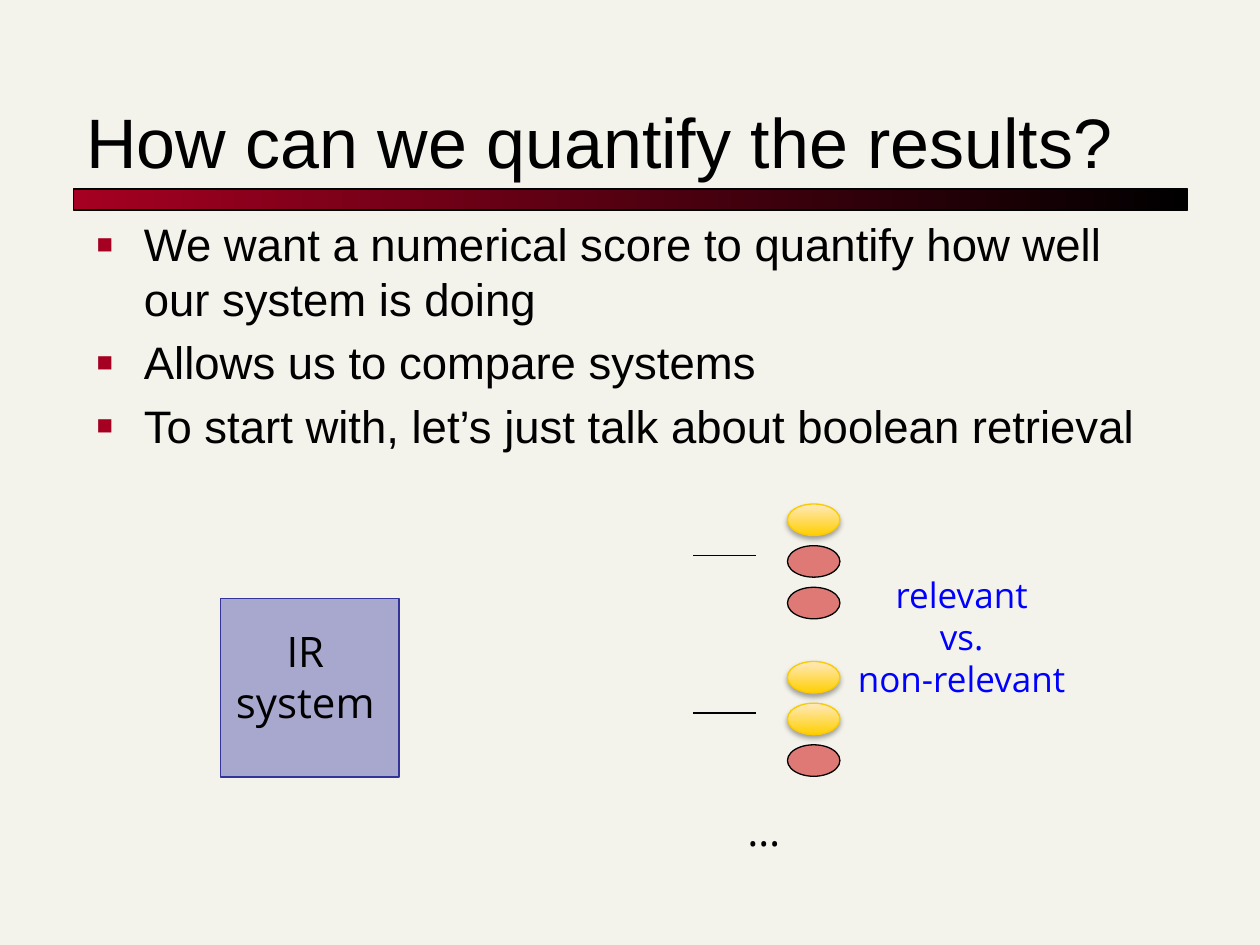
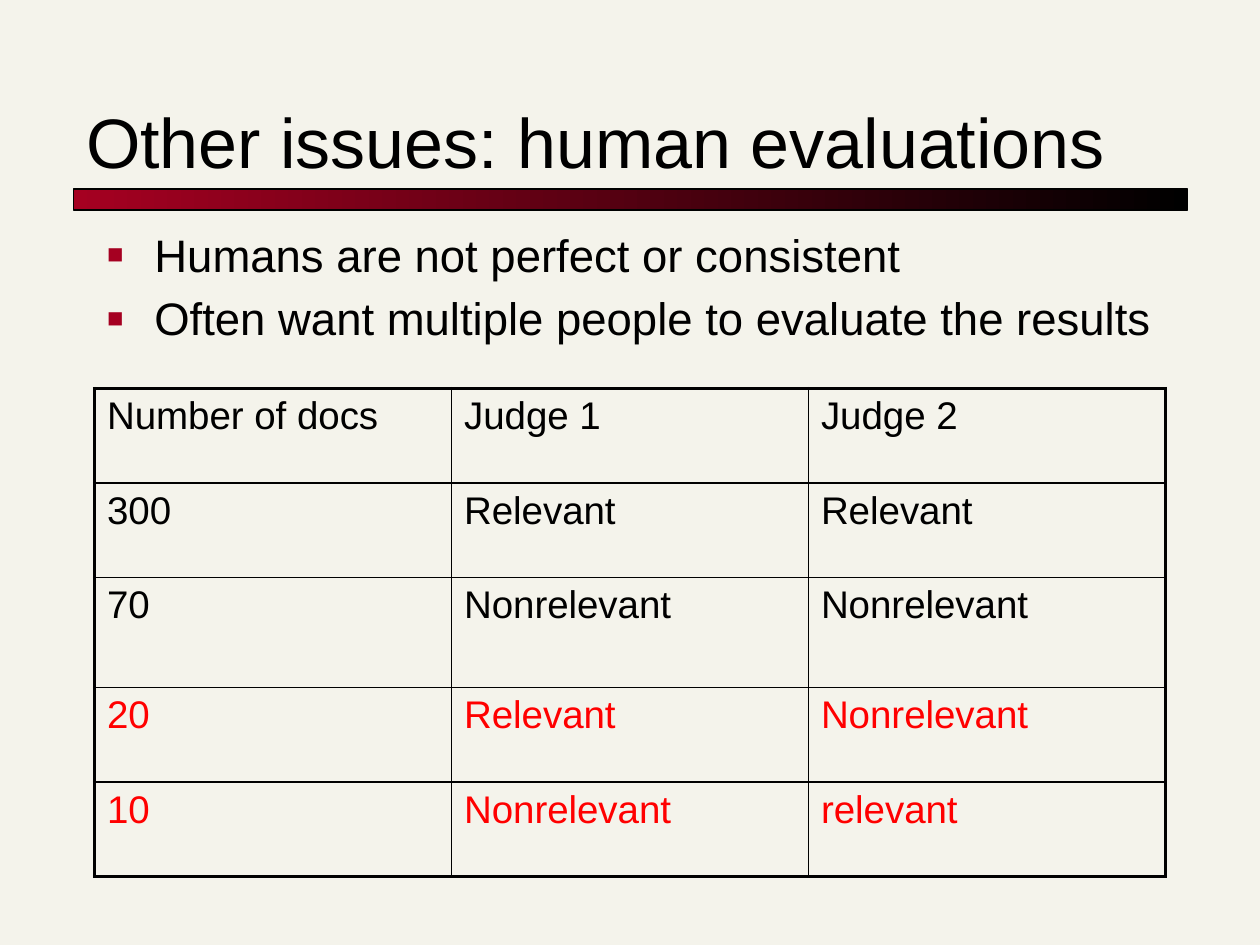
"""Builds two slides on measuring retrieval results."""
from lxml.etree import SubElement
from pptx import Presentation
from pptx.dml.color import RGBColor
from pptx.enum.shapes import MSO_CONNECTOR as Connector, MSO_SHAPE as Shape
from pptx.enum.text import MSO_ANCHOR as Anchor, MSO_AUTO_SIZE as AutoSize, PP_ALIGN as Align
from pptx.oxml.ns import qn
from pptx.util import Pt

COLORS = {
    "paper": "F4F3EB", "ink": "000000", "crimson": "A50021", "navy": "000090",
    "navy_edge": "333399", "gold": "FFCF01", "cream": "FFE9BD", "gold_edge": "FACB00",
    "red": "CC0000", "alert": "FF0000", "blue": "0000FF",
}
FONTS = {
    "title": {"name": "Arial", "size": Pt(40)},
    "body": {"name": "Arial", "size": Pt(26)},
    "table": {"name": "Arial", "size": Pt(22)},
    "label": {"name": "Open Sans", "size": Pt(24)},
    "note": {"name": "Open Sans", "size": Pt(20)},
}


def color(name):
    """Return the named colour."""
    return RGBColor.from_string(COLORS[name])


def assign(target, values):
    """Set each attribute in values on the target."""
    for name, value in values.items():
        setattr(target, name, value)


def add_node(parent, tag, **values):
    """Append an XML element with the given attributes."""
    return SubElement(parent, qn(tag), {name: str(value) for name, value in values.items()})


class SlideBuilder:
    """Holds the shared style and the current slide."""

    def __init__(self):
        """Start a deck with the shared page size and background."""
        self.deck = Presentation()
        assign(self.deck, {"slide_width": Pt(720), "slide_height": Pt(540)})
        background = self.deck.slide_master.background.fill
        background.solid()
        background.fore_color.rgb = color("paper")
        self.page = None

    def start(self, title):
        """Add a slide with its title and band."""
        self.page = self.deck.slides.add_slide(self.deck.slide_layouts[1])
        box = self.page.shapes.title
        self.place(box, 42, 30, 636, 78)
        self.add_text(box.text_frame, [title], "title", align=Align.LEFT)
        assign(box.text_frame, {"vertical_anchor": Anchor.BOTTOM, "auto_size": AutoSize.NONE})
        band = self.shape(Shape.RECTANGLE, 42, 108, 636.5, 12)
        self.gradient(band, "crimson", "ink", 0)

    def place(self, box, left, top, width, height):
        """Move and size a box."""
        assign(box, {"left": Pt(left), "top": Pt(top), "width": Pt(width), "height": Pt(height)})

    def add_text(self, frame, lines, font, ink="ink", align=None, before=0):
        """Fill a text frame with one paragraph per line."""
        for index, line in enumerate(lines):
            para = frame.add_paragraph() if index else frame.paragraphs[0]
            assign(para, {"text": line, "alignment": align, "space_before": Pt(before)})
            for span in para.runs:
                assign(span.font, FONTS[font])
                span.font.color.rgb = color(ink)

    def bullets(self, lines, left, top, width, height):
        """Set a square-bulleted list in the body placeholder."""
        box = self.page.placeholders[1]
        self.place(box, left, top, width, height)
        self.add_text(box.text_frame, lines, "body", before=5.2)
        box.text_frame.auto_size = AutoSize.NONE
        for para in box.text_frame.paragraphs:
            props = para._p.get_or_add_pPr()
            props.set("marL", str(Pt(27)))
            props.set("indent", str(-Pt(27)))
            add_node(add_node(props, "a:buClr"), "a:srgbClr", val=COLORS["crimson"])
            add_node(props, "a:buSzPct", val=60000)
            add_node(props, "a:buFont", typeface="Arial")
            add_node(props, "a:buChar", char="■")

    def shape(self, kind, left, top, width, height, edge="ink"):
        """Add an outlined shape without a shadow."""
        box = self.page.shapes.add_shape(kind, Pt(left), Pt(top), Pt(width), Pt(height))
        box.shadow.inherit = False
        box.line.color.rgb = color(edge)
        box.line.width = Pt(0.75)
        return box

    def gradient(self, box, start, end, angle):
        """Fill a shape with a two-colour gradient."""
        box.fill.gradient()
        box.fill.gradient_angle = angle
        for stop, name, position in zip(box.fill.gradient_stops, (start, end), (0, 1)):
            stop.color.rgb = color(name)
            stop.position = position

    def tint(self, box, name, percent):
        """Fill a shape with a see-through colour."""
        box.fill.solid()
        box.fill.fore_color.rgb = color(name)
        value = box._element.spPr.find(f"{qn('a:solidFill')}/{qn('a:srgbClr')}")
        add_node(value, "a:alpha", val=percent * 1000)

    def document(self, top, relevant):
        """Add a gold oval for a relevant document or a red one otherwise."""
        oval = self.shape(Shape.OVAL, 450, top, 30, 18, "gold_edge" if relevant else "ink")
        if not relevant:
            self.tint(oval, "red", 50)
            return
        self.gradient(oval, "gold", "cream", 90)
        effects = oval._element.spPr.find(qn("a:effectLst"))
        shadow = add_node(effects, "a:outerShdw", blurRad=Pt(3.1), dist=Pt(1.8),
                          dir=5400000, rotWithShape=0)
        add_node(add_node(shadow, "a:srgbClr", val=COLORS["ink"]), "a:alpha", val=35000)

    def line(self, left, top, right):
        """Add a thin horizontal line."""
        rule = self.page.shapes.add_connector(
            Connector.STRAIGHT, Pt(left), Pt(top), Pt(right), Pt(top))
        rule.line.color.rgb = color("ink")
        rule.line.width = Pt(0.75)
        add_node(rule._element.spPr, "a:effectLst")

    def label(self, lines, left, top, width, height, font="label", ink="ink", align=Align.CENTER):
        """Add an unwrapped text box."""
        box = self.page.shapes.add_textbox(Pt(left), Pt(top), Pt(width), Pt(height))
        assign(box.text_frame, {"word_wrap": False, "auto_size": AutoSize.SHAPE_TO_FIT_TEXT})
        self.add_text(box.text_frame, lines, font, ink, align)

    def table(self, rows, heights, left, top, width, alert_from):
        """Add a ruled table whose rows from alert_from on are red."""
        count = len(rows[0])
        grid = self.page.shapes.add_table(
            len(rows), count, Pt(left), Pt(top), Pt(width), Pt(sum(heights))).table
        assign(grid, {"first_row": False, "horz_banding": False})
        for column in grid.columns:
            column.width = Pt(width / count)
        for row, (texts, height) in enumerate(zip(rows, heights)):
            grid.rows[row].height = Pt(height)
            for column, text in enumerate(texts):
                cell = grid.cell(row, column)
                ink = "alert" if row >= alert_from else "ink"
                self.add_text(cell.text_frame, [text], "table", ink, before=4.4)
                outer = {"L": column == 0, "R": column == count - 1,
                         "T": row == 0, "B": row == len(rows) - 1}
                self.borders(cell, outer)
                cell.fill.background()

    def borders(self, cell, outer):
        """Draw cell borders, thicker on the outer sides."""
        props = cell._tc.get_or_add_tcPr()
        for side, thick in outer.items():
            edge = add_node(props, f"a:ln{side}", w=Pt(2.25 if thick else 1))
            add_node(add_node(edge, "a:solidFill"), "a:srgbClr", val=COLORS["ink"])


def quantify_slide(builder):
    """Build the slide on scoring a retrieval system."""
    builder.start("How can we quantify the results?")
    builder.bullets([
        "We want a numerical score to quantify how well our system is doing",
        "Allows us to compare systems",
        "To start with, let’s just talk about boolean retrieval",
    ], 48, 120, 612, 150)
    system = builder.shape(Shape.RECTANGLE, 126, 342, 102, 102, "navy_edge")
    builder.tint(system, "navy", 31)
    builder.label(["IR\nsystem"], 126, 354, 97, 65.5)
    for top, ranking in ((288, (True, False, False)), (378, (True, True, False))):
        builder.line(396, top + 29.5, 432)
        for rank, relevant in enumerate(ranking):
            builder.document(top + 23.8 * rank, relevant)
    builder.label(["…"], 420, 456, 39, 36, align=Align.LEFT)
    builder.label(["relevant", "vs.", "non-relevant"], 481, 324, 137, 80, "note", "blue")


def judges_slide(builder):
    """Build the slide comparing two human judges."""
    builder.start("Other issues: human evaluations")
    builder.bullets([
        "Humans are not perfect or consistent",
        "Often want multiple people to evaluate the results",
    ], 54, 126, 612, 84)
    builder.table([
        ("Number of docs", "Judge 1", "Judge 2"),
        ("300", "Relevant", "Relevant"),
        ("70", "Nonrelevant", "Nonrelevant"),
        ("20", "Relevant", "Nonrelevant"),
        ("10", "Nonrelevant", "relevant"),
    ], (54, 54, 63, 54, 54), 54, 222, 612, alert_from=3)


def main():
    """Build and save the deck."""
    builder = SlideBuilder()
    quantify_slide(builder)
    judges_slide(builder)
    builder.deck.save("out.pptx")


if __name__ == "__main__":
    main()
